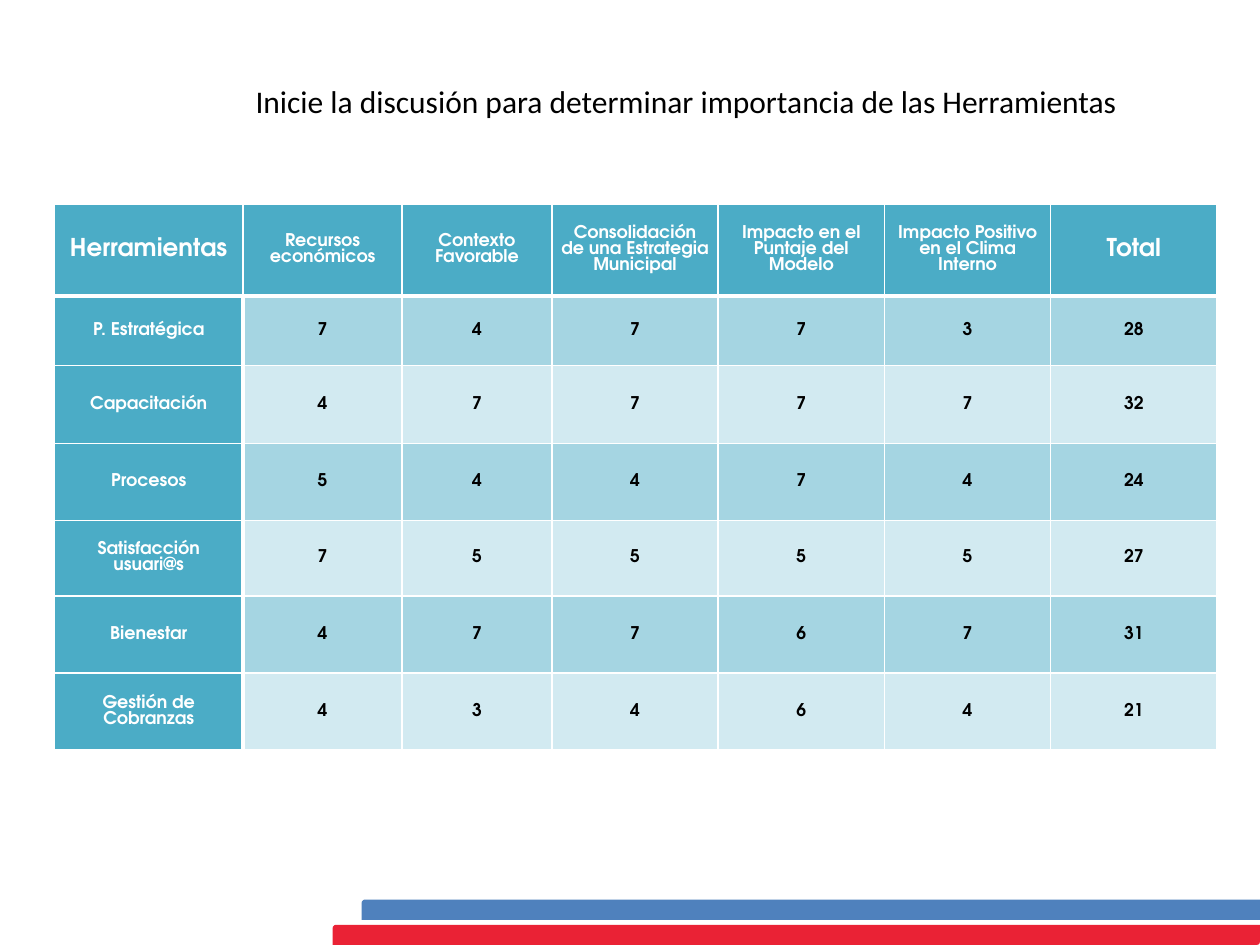
import pptx
import pptx.util
import pptx.dml.color
import pptx.enum.shapes
import pptx.enum.text
import pptx.oxml.ns
import lxml.etree

Inches = pptx.util.Inches
hues = {"white": "FFFFFF", "black": "000000", "blue": "4F81BD", "red": "EA2235",
        "teal": "4BACC6", "mid": "A5D5E2", "pale": "D2EAF1"}


def paint(fill, hue):
    fill.solid()
    fill.fore_color.rgb = pptx.dml.color.RGBColor.from_string(hues[hue])


def write(para, text, size, face, hue, bold=False):
    run = para.add_run()
    run.text = text
    run.font.size = pptx.util.Pt(size)
    run.font.name = face
    run.font.bold = bold
    paint(run.font.fill, hue)


deck = pptx.Presentation()
deck.slide_width = Inches(10)
deck.slide_height = Inches(7.5)
slide = deck.slides.add_slide(deck.slide_layouts[6])

for left, top, hue in [(2.87, 7.14, "blue"), (2.64, 7.34, "red")]:
    bar = slide.shapes.add_shape(
        pptx.enum.shapes.MSO_SHAPE.ROUND_2_DIAG_RECTANGLE,
        Inches(left), Inches(top), Inches(7.36), Inches(0.16))
    bar.shadow.inherit = False
    paint(bar.fill, hue)
    bar.line.fill.background()

data = [
    ["Herramientas", "Recursos económicos", "Contexto Favorable",
     "Consolidación de una Estrategia Municipal", "Impacto en el Puntaje del Modelo",
     "Impacto Positivo en el Clima Interno", "Total"],
    ["P. Estratégica", 7, 4, 7, 7, 3, 28],
    ["Capacitación", 4, 7, 7, 7, 7, 32],
    ["Procesos", 5, 4, 4, 7, 4, 24],
    ["Satisfacción usuari@s", 7, 5, 5, 5, 5, 27],
    ["Bienestar", 4, 7, 7, 6, 7, 31],
    ["Gestión de Cobranzas", 4, 3, 4, 6, 4, 21],
]
wide = [1.5, 1.26, 1.19] + [1.32] * 4
high = [0.73, 0.55, 0.62, 0.61, 0.6, 0.61, 0.61]
table = slide.shapes.add_table(len(high), len(wide), Inches(0.43), Inches(1.62),
                               Inches(sum(wide)), Inches(sum(high))).table
for col, width in zip(table.columns, wide):
    col.width = Inches(width)
for row, height in zip(table.rows, high):
    row.height = Inches(height)

for r, line in enumerate(data):
    for c, value in enumerate(line):
        cell = table.cell(r, c)
        cell.margin_left = cell.margin_right = Inches(0.07)
        cell.margin_top = cell.margin_bottom = 0
        cell.vertical_anchor = pptx.enum.text.MSO_ANCHOR.MIDDLE
        edges = {"lnL": 3 if r and c == 1 else 1, "lnR": 3 if r and c == 0 else 1,
                 "lnT": 3 if r == 1 else 1, "lnB": 3 if r == 0 else 1}
        props = cell._tc.get_or_add_tcPr()
        for edge, width in edges.items():
            rule = lxml.etree.SubElement(props, pptx.oxml.ns.qn("a:" + edge),
                                         w=str(pptx.util.Pt(width)))
            solid = lxml.etree.SubElement(rule, pptx.oxml.ns.qn("a:solidFill"))
            lxml.etree.SubElement(solid, pptx.oxml.ns.qn("a:srgbClr"), val=hues["white"])
        head = r == 0 or c == 0
        paint(cell.fill, "teal" if head else "mid" if r % 2 else "pale")
        para = cell.text_frame.paragraphs[0]
        para.alignment = pptx.enum.text.PP_ALIGN.CENTER
        size = 14 if r == 0 and c in (0, len(wide) - 1) else 10
        write(para, str(value), size, "TeX Gyre Adventor", "white" if head else "black", True)

title = slide.shapes.add_textbox(Inches(1.93), Inches(0.6), Inches(7.12), Inches(0.4))
frame = title.text_frame
frame.word_wrap = False
frame.auto_size = pptx.enum.text.MSO_AUTO_SIZE.SHAPE_TO_FIT_TEXT
write(frame.paragraphs[0],
      "Inicie la discusión para determinar importancia de las Herramientas",
      18, "Calibri", "black")

deck.save("out.pptx")
